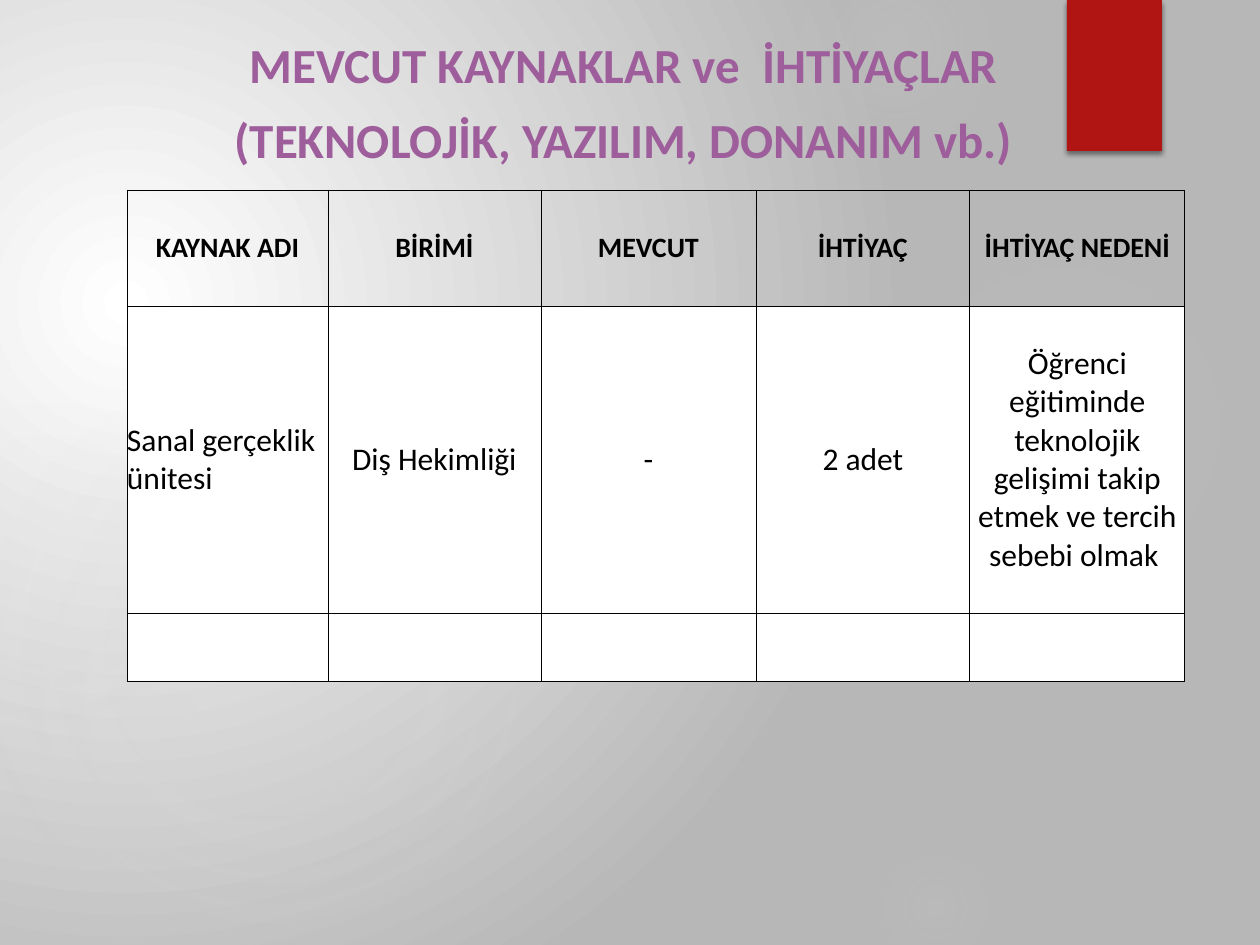
"""Build the slide listing available technology resources and needs."""
from lxml import etree
from pptx import Presentation
from pptx.dml.color import RGBColor
from pptx.enum.shapes import MSO_SHAPE
from pptx.enum.text import MSO_ANCHOR, MSO_AUTO_SIZE, PP_ALIGN
from pptx.oxml.ns import nsdecls, qn
from pptx.util import Pt

OVAL, RECT = MSO_SHAPE.OVAL, MSO_SHAPE.RECTANGLE
LEFT, CENTER = PP_ALIGN.LEFT, PP_ALIGN.CENTER
MIDDLE, BOTTOM = MSO_ANCHOR.MIDDLE, MSO_ANCHOR.BOTTOM
NO_AUTOFIT = MSO_AUTO_SIZE.NONE

PX = 914400 // 126
FONT = "Calibri"
WHITE = RGBColor(0xFF, 0xFF, 0xFF)
BLACK = RGBColor(0x00, 0x00, 0x00)
GREY = RGBColor(0xB7, 0xB7, 0xB7)
GLOW = RGBColor(0xD9, 0xD9, 0xD9)
RED = RGBColor(0xB0, 0x15, 0x13)
PURPLE = RGBColor(0x9E, 0x5E, 0x9B)

TITLE_LINES = ["MEVCUT KAYNAKLAR ve  İHTİYAÇLAR", "(TEKNOLOJİK, YAZILIM, DONANIM vb.)"]
TITLE_BOX = (217, 48, 813, 127)
TAB_BOX = (1067, 0, 95, 151)

ROWS = [
    ["KAYNAK ADI", "BİRİMİ", "MEVCUT", "İHTİYAÇ", "İHTİYAÇ NEDENİ"],
    ["Sanal gerçeklik ünitesi", "Diş Hekimliği", "-", "2 adet",
     "Öğrenci eğitiminde teknolojik gelişimi takip etmek ve tercih sebebi olmak "],
    [""] * 5,
]
TABLE_LEFT, TABLE_TOP = 127, 190
COLUMN_WIDTHS = [201, 213, 215, 214, 215]
ROW_HEIGHTS = [116, 307, 68]

BACKGROUND_STOPS = [(0, WHITE, 100), (100, GREY, 100)]
BACKGROUND_FOCUS = (45, 65, 125, 100)
GLOW_FOCUS = (50, 50, 50, 50)
GLOWS = [
    (868, 231, 388, (7, 6), 69),
    (784, -63, 220, (14, 7), 73),
    (868, 840, 136, (9, 5), 66),
    (-21, 368, 577, (11, 10), 75),
    (-116, 399, 325, (8, 8), 72),
]


def scaled(box):
    return [length * PX for length in box]


def set_radial_fill(owner, stops, focus):
    stop_xml = "".join(
        f'<a:gs pos="{pos * 1000}"><a:srgbClr val="{color}">'
        f'<a:alpha val="{alpha * 1000}"/></a:srgbClr></a:gs>'
        for pos, color, alpha in stops)
    left, top, right, bottom = (side * 1000 for side in focus)
    gradient = etree.fromstring(
        f'<a:gradFill {nsdecls("a")} rotWithShape="1"><a:gsLst>{stop_xml}</a:gsLst>'
        f'<a:path path="circle"><a:fillToRect l="{left}" t="{top}" r="{right}" b="{bottom}"/>'
        '</a:path></a:gradFill>')
    solid = next(owner.iter(qn("a:solidFill")))
    solid.getparent().replace(solid, gradient)


def add_plain_shape(slide, preset, box, color):
    shape = slide.shapes.add_shape(preset, *scaled(box))
    shape.shadow.inherit = False
    shape.fill.solid()
    shape.fill.fore_color.rgb = color
    shape.line.fill.background()
    return shape


def add_text(paragraph, text, size, color, bold, align):
    paragraph.alignment = align
    run = paragraph.add_run()
    run.text = text
    run.font.name, run.font.size, run.font.bold = FONT, Pt(size), bold
    run.font.color.rgb = color


def add_backdrop(slide):
    slide.background.fill.solid()
    set_radial_fill(slide.element, BACKGROUND_STOPS, BACKGROUND_FOCUS)
    for left, top, size, (inner, middle), edge in GLOWS:
        glow = add_plain_shape(slide, OVAL, (left, top, size, size), GLOW)
        stops = [(0, GLOW, inner), (36, GLOW, middle), (edge, GLOW, 0)]
        set_radial_fill(glow.element, stops, GLOW_FOCUS)


def add_red_tab(slide):
    tab = add_plain_shape(slide, RECT, TAB_BOX, RED)
    effects = next(tab.element.iter(qn("a:effectLst")))
    effects.append(etree.fromstring(
        f'<a:outerShdw {nsdecls("a")} blurRad="{Pt(3)}" dist="{Pt(2)}" dir="5400000" '
        f'rotWithShape="0"><a:srgbClr val="{BLACK}"><a:alpha val="45000"/></a:srgbClr>'
        '</a:outerShdw>'))
    return tab


def fill_title(title):
    title.left, title.top, title.width, title.height = scaled(TITLE_BOX)
    frame = title.text_frame
    frame.word_wrap, frame.auto_size = True, NO_AUTOFIT
    frame.vertical_anchor = BOTTOM
    for index, line in enumerate(TITLE_LINES):
        paragraph = frame.add_paragraph() if index else frame.paragraphs[0]
        paragraph.line_spacing = 1.1
        paragraph.space_before, paragraph.space_after = Pt(0), Pt(6)
        add_text(paragraph, line, 28, PURPLE, True, CENTER)


def set_borders(cell):
    properties = cell._tc.get_or_add_tcPr()
    for index, side in enumerate("LRTB"):
        properties.insert(index, etree.fromstring(
            f'<a:ln{side} {nsdecls("a")} w="{Pt(0.5)}"><a:solidFill>'
            f'<a:srgbClr val="{BLACK}"/></a:solidFill></a:ln{side}>'))


def add_resource_table(slide):
    box = (TABLE_LEFT, TABLE_TOP, sum(COLUMN_WIDTHS), sum(ROW_HEIGHTS))
    table = slide.shapes.add_table(len(ROWS), len(COLUMN_WIDTHS), *scaled(box)).table
    table.first_row = table.horz_banding = False
    for column, width in zip(table.columns, COLUMN_WIDTHS):
        column.width = width * PX
    for row, height in zip(table.rows, ROW_HEIGHTS):
        row.height = height * PX
    for row_index, texts in enumerate(ROWS):
        is_header = row_index == 0
        for column_index, text in enumerate(texts):
            cell = table.cell(row_index, column_index)
            cell.margin_left = cell.margin_right = cell.margin_top = cell.margin_bottom = 0
            cell.vertical_anchor = MIDDLE
            if is_header:
                cell.fill.background()
            else:
                cell.fill.solid()
                cell.fill.fore_color.rgb = WHITE
            set_borders(cell)
            if text:
                align = CENTER if is_header or column_index else LEFT
                add_text(cell.text_frame.paragraphs[0], text, 16 if is_header else 18,
                         BLACK, is_header, align)


def main():
    deck = Presentation()
    deck.slide_width, deck.slide_height = scaled((1260, 945))
    slide = deck.slides.add_slide(deck.slide_layouts[5])
    add_backdrop(slide)
    tab = add_red_tab(slide)
    title = slide.shapes.title
    fill_title(title)
    tab.element.addnext(title.element)
    add_resource_table(slide)
    deck.save("out.pptx")


if __name__ == "__main__":
    main()
